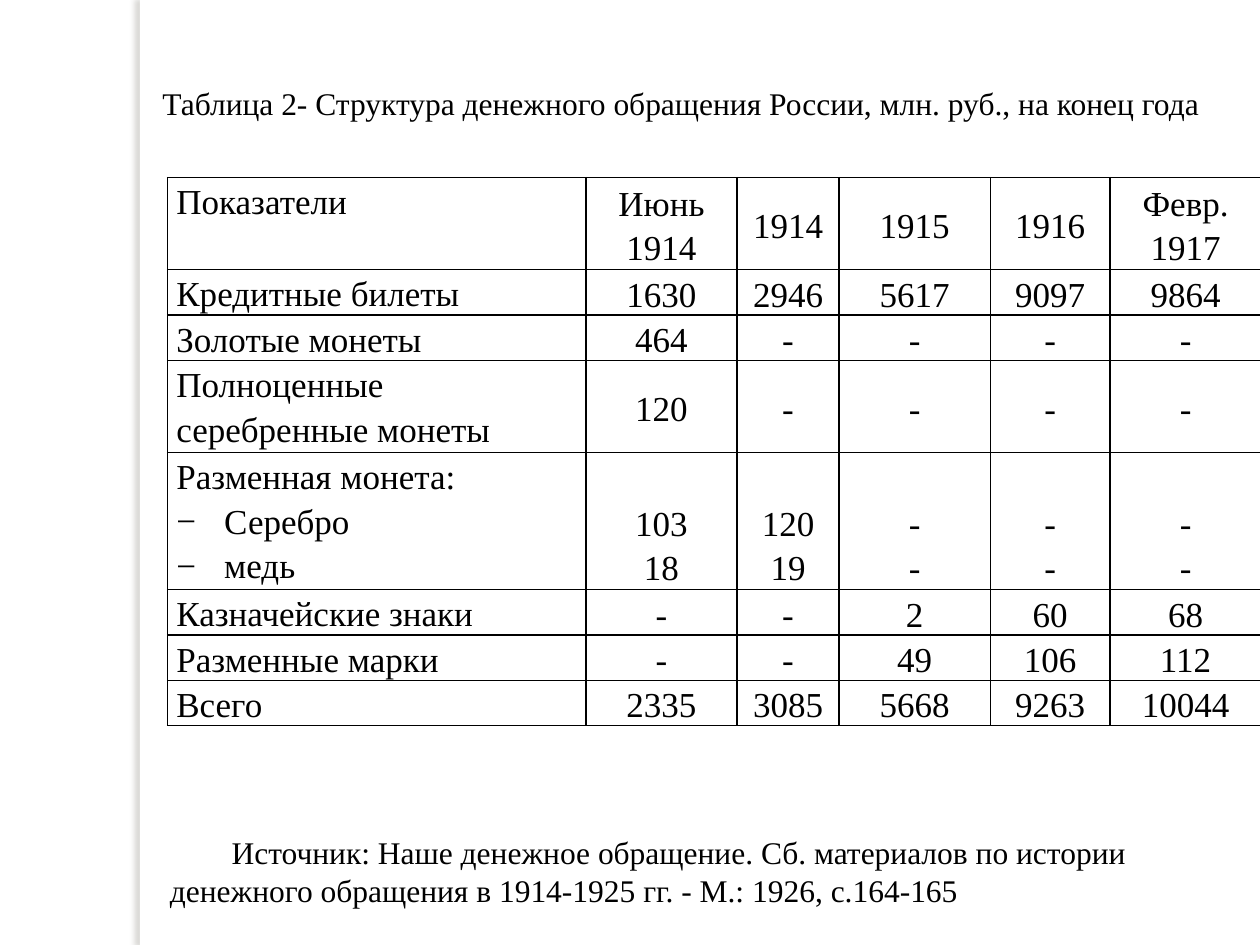
from lxml import etree
from pptx import Presentation
from pptx.dml.color import RGBColor
from pptx.enum.shapes import MSO_SHAPE
from pptx.enum.text import MSO_ANCHOR, MSO_AUTO_SIZE, PP_ALIGN
from pptx.oxml import parse_xml
from pptx.oxml.ns import nsdecls, qn
from pptx.util import Inches, Pt

COLORS = {"text": "000000", "border": "000000", "strip": "FFFFFF", "shadow": "736F63"}
COLUMN_WIDTHS = [3.32, 1.2, 0.81, 1.2, 0.95, 1.2]
ROW_HEIGHTS = [0.73, 0.36, 0.36, 0.73, 1.09, 0.36, 0.36, 0.36]
# Each line break inside a cell starts a new paragraph.
ROWS = [
    ["Показатели", "Июнь 1914", "1914", "1915", "1916", "Февр. 1917"],
    ["Кредитные билеты", "1630", "2946", "5617", "9097", "9864"],
    ["Золотые монеты", "464", "-", "-", "-", "-"],
    ["Полноценные серебренные монеты", "120", "-", "-", "-", "-"],
    ["Разменная монета:\nСеребро\nмедь", "103\n18", "120\n19", "-\n-", "-\n-", "-\n-"],
    ["Казначейские знаки", "-", "-", "2", "60", "68"],
    ["Разменные марки", "-", "-", "49", "106", "112"],
    ["Всего", "2335", "3085", "5668", "9263", "10044"],
]
TITLE = "Таблица 2- Структура денежного обращения России, млн. руб., на конец года"
SOURCE = ("Источник: Наше денежное обращение. Сб. материалов по истории "
          "денежного обращения в 1914-1925 гг. - М.: 1926, с.164-165")


class SlideBuilder:
    font_name = "Times New Roman"
    table_size = 20
    text_size = 18
    line_spacing = 1.15

    def __init__(self, slide):
        self.slide = slide

    def format_runs(self, paragraph, size):
        for run in paragraph.runs:
            run.font.name = self.font_name
            run.font.size = Pt(size)
            run.font.color.rgb = RGBColor.from_string(COLORS["text"])

    def set_indent(self, paragraph, left, first_line):
        properties = paragraph._p.get_or_add_pPr()
        properties.set("marL", str(Inches(left)))
        properties.set("indent", str(Inches(first_line)))
        return properties

    def add_strip(self, left, top, width, height):
        """Add a vertical strip that casts a soft shadow to its left."""
        strip = self.slide.shapes.add_shape(
            MSO_SHAPE.RECTANGLE, Inches(left), Inches(top), Inches(width), Inches(height))
        strip.fill.solid()
        strip.fill.fore_color.rgb = RGBColor.from_string(COLORS["strip"])
        strip.line.fill.background()
        strip.shadow.inherit = False
        strip._element.spPr.find(qn("a:effectLst")).append(parse_xml(
            f'<a:outerShdw {nsdecls("a")} blurRad="{Pt(3)}" dist="{Pt(3)}" dir="10800000" '
            f'algn="ctr" rotWithShape="0"><a:srgbClr val="{COLORS["shadow"]}">'
            '<a:alpha val="25000"/></a:srgbClr></a:outerShdw>'))

    def add_text(self, text, left, top, width, height, wrap=True, anchor=MSO_ANCHOR.TOP):
        box = self.slide.shapes.add_textbox(
            Inches(left), Inches(top), Inches(width), Inches(height))
        frame = box.text_frame
        frame.text = text
        frame.word_wrap = wrap
        frame.auto_size = MSO_AUTO_SIZE.SHAPE_TO_FIT_TEXT
        frame.vertical_anchor = anchor
        self.set_indent(frame.paragraphs[0], 0, 0.49)
        self.format_runs(frame.paragraphs[0], self.text_size)

    def add_table(self, rows, left, top, column_widths, row_heights):
        table = self.slide.shapes.add_table(
            len(rows), len(column_widths), Inches(left), Inches(top),
            Inches(sum(column_widths)), Inches(sum(row_heights))).table
        table.first_row = table.horz_banding = False
        for column, width in zip(table.columns, column_widths):
            column.width = Inches(width)
        for row, height, texts in zip(table.rows, row_heights, rows):
            row.height = Inches(height)
            for index, (cell, text) in enumerate(zip(row.cells, texts)):
                self.fill_cell(cell, text, is_label=index == 0)

    def fill_cell(self, cell, text, is_label):
        cell.text_frame.text = text
        cell.margin_left = cell.margin_right = Inches(0.07)
        cell.margin_top = cell.margin_bottom = 0
        paragraphs = cell.text_frame.paragraphs
        if not is_label:
            cell.vertical_anchor = MSO_ANCHOR.MIDDLE
            if len(paragraphs) > 1:
                # Keeps the values level with the listed items below the label.
                cell.margin_top = Inches(0.36)
        for index, paragraph in enumerate(paragraphs):
            paragraph.line_spacing = self.line_spacing
            paragraph.alignment = PP_ALIGN.LEFT if is_label else PP_ALIGN.CENTER
            if is_label and index > 0:
                self.add_dash(paragraph)
            self.format_runs(paragraph, self.table_size)
        cell.fill.background()
        self.add_borders(cell)

    def add_dash(self, paragraph):
        paragraph.alignment = PP_ALIGN.JUSTIFY
        properties = self.set_indent(paragraph, 0.38, -0.38)
        etree.SubElement(properties, qn("a:buFont")).set("typeface", self.font_name)
        etree.SubElement(properties, qn("a:buChar")).set("char", "−")

    def add_borders(self, cell):
        properties = cell._tc.get_or_add_tcPr()
        for index, side in enumerate(("lnL", "lnR", "lnT", "lnB")):
            properties.insert(index, parse_xml(
                f'<a:{side} {nsdecls("a")} w="{Pt(1)}"><a:solidFill>'
                f'<a:srgbClr val="{COLORS["border"]}"/></a:solidFill></a:{side}>'))


def main():
    presentation = Presentation()
    presentation.slide_width = Inches(10)
    presentation.slide_height = Inches(7.5)
    builder = SlideBuilder(presentation.slides.add_slide(presentation.slide_layouts[6]))
    builder.add_strip(1.11, 0, 0.08, 7.5)
    builder.add_table(ROWS, 1.33, 1.41, COLUMN_WIDTHS, ROW_HEIGHTS)
    builder.add_text(TITLE, 0.7, 0.62, 9.01, 0.4, wrap=False, anchor=MSO_ANCHOR.MIDDLE)
    builder.add_text(SOURCE, 1.25, 6.56, 8.13, 0.71)
    presentation.save("out.pptx")


if __name__ == "__main__":
    main()
